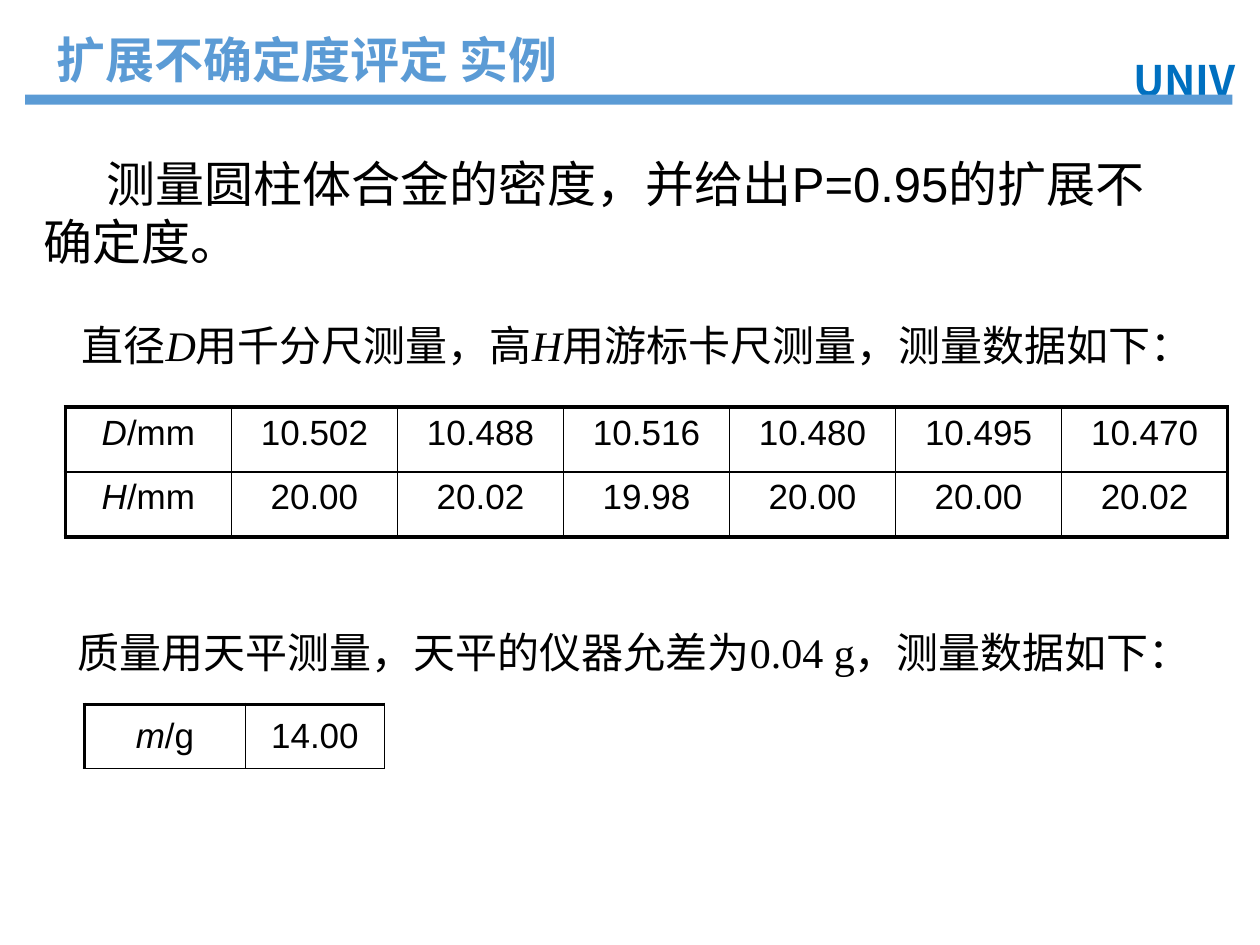
from lxml.etree import SubElement
from pptx import Presentation
from pptx.dml.color import RGBColor
from pptx.enum.shapes import MSO_SHAPE
from pptx.enum.text import MSO_ANCHOR, MSO_AUTO_SIZE, PP_ALIGN
from pptx.oxml.ns import qn
from pptx.util import Pt

COLORS = {"black": "000000", "accent": "5B9BD5", "label": "0070C0"}
CJK = "Noto Sans CJK SC"


def write(tf, text, size=20, font="Arial", color="black", bold=False,
          align=PP_ALIGN.LEFT, spacing=None, indent=0, wrap=True):
    tf.word_wrap = wrap
    p = tf.paragraphs[0]
    p.alignment = align
    if spacing:
        p.line_spacing = Pt(spacing)
    if indent:
        p._p.get_or_add_pPr().set("indent", str(Pt(indent)))
    for i, part in enumerate(text.split("*")):
        if not part:
            continue
        r = p.add_run()
        r.text = part
        r.font.size = Pt(size)
        r.font.bold = bold
        r.font.italic = i % 2 == 1
        r.font.color.rgb = RGBColor.from_string(COLORS[color])
        r.font.name = font
        SubElement(r._r.get_or_add_rPr(), qn("a:ea"), typeface=CJK)


def set_borders(cell, widths):
    tcPr = cell._tc.get_or_add_tcPr()
    for i, (side, width) in enumerate(widths.items()):
        ln = SubElement(tcPr, qn(f"a:ln{side}"), w=str(Pt(width)))
        fill = SubElement(ln, qn("a:solidFill"))
        SubElement(fill, qn("a:srgbClr"), val=COLORS["black"])
        tcPr.insert(i, ln)


prs = Presentation()
prs.slide_width, prs.slide_height = Pt(720), Pt(540)
s = prs.slides.add_slide(prs.slide_layouts[5])

title = s.shapes.title
title.left, title.top, title.width, title.height = Pt(25.2), Pt(10.8), Pt(312.5), Pt(39.6)
title.text_frame.auto_size = MSO_AUTO_SIZE.NONE
title.text_frame.vertical_anchor = MSO_ANCHOR.TOP
write(title.text_frame, "扩展不确定度评定 实例", size=28, font=CJK, color="accent",
      bold=True, spacing=36, wrap=False)

texts = [
    (619.2, 27.4, 115.2, 36, "UNIV",
     dict(size=24, font=CJK, color="label", bold=True, align=PP_ALIGN.CENTER)),
    (18, 85, 668.9, 74.9, "测量圆柱体合金的密度，并给出P=0.95的扩展不确定度。",
     dict(size=28, spacing=33, indent=36)),
    (39.6, 180, 655.2, 36, "直径*D*用千分尺测量，高*H*用游标卡尺测量，测量数据如下：",
     dict(size=24, font="Times New Roman", spacing=28, wrap=False)),
    (37.4, 355, 656.6, 36, "质量用天平测量，天平的仪器允差为0.04 g，测量数据如下：",
     dict(size=24, font="Times New Roman", spacing=28, wrap=False)),
]
for x, y, w, h, text, style in texts:
    sp = s.shapes.add_textbox(Pt(x), Pt(y), Pt(w), Pt(h))
    write(sp.text_frame, text, **style)

bar = s.shapes.add_shape(MSO_SHAPE.RECTANGLE, Pt(14.4), Pt(54), Pt(689.8), Pt(5.8))
bar.shadow.inherit = False
bar.fill.solid()
bar.fill.fore_color.rgb = RGBColor.from_string(COLORS["accent"])
bar.line.fill.background()

THIN, THICK = 1, 2.25
tables = [
    (37.4, 232.6, [94.9] * 7, 37.1, MSO_ANCHOR.TOP, THICK, [
        ["*D*/mm", "10.502", "10.488", "10.516", "10.480", "10.495", "10.470"],
        ["*H*/mm", "20.00", "20.02", "19.98", "20.00", "20.00", "20.02"]]),
    (48.2, 402.5, [92.2, 79.2], 36.7, MSO_ANCHOR.MIDDLE, THIN, [["*m*/g", "14.00"]]),
]
for x, y, widths, height, anchor, end, rows in tables:
    frame = s.shapes.add_table(len(rows), len(widths), Pt(x), Pt(y),
                               Pt(sum(widths)), Pt(height * len(rows)))
    table = frame.table
    table.first_row = table.horz_banding = False
    for column, width in zip(table.columns, widths):
        column.width = Pt(width)
    for i, row in enumerate(rows):
        table.rows[i].height = Pt(height)
        for j, text in enumerate(row):
            cell = table.cell(i, j)
            cell.fill.background()
            cell.vertical_anchor = anchor
            write(cell.text_frame, text, align=PP_ALIGN.CENTER)
            set_borders(cell, {
                "L": THICK if j == 0 else THIN,
                "R": end if j == len(row) - 1 else THIN,
                "T": THICK if i == 0 else THIN,
                "B": end if i == len(rows) - 1 else THIN,
            })

prs.save("out.pptx")
